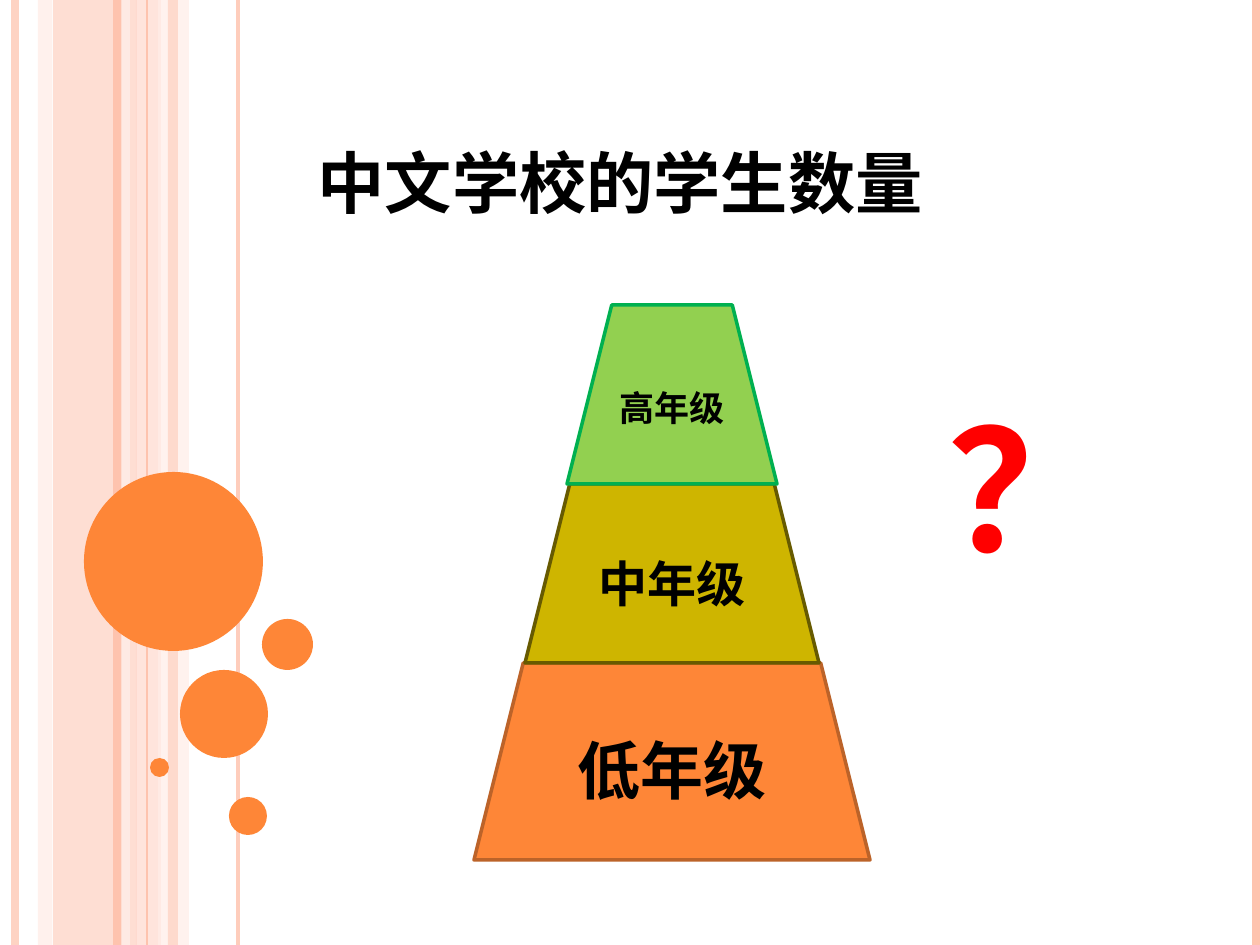
from dataclasses import dataclass

from lxml import etree
from pptx import Presentation
from pptx import util as u
from pptx.dml.color import RGBColor
from pptx.enum import shapes, text
from pptx.oxml.ns import qn

SCALE = 914400 / 126  # EMU in one px
SLIDE_W, SLIDE_H = 1260, 945


@dataclass(frozen=True)
class Theme:
    heading_font: str = "Noto Sans CJK SC"
    body_font: str = "Cambria"
    asian_font: str = "Noto Sans CJK SC"
    ink: str = "000000"
    alert: str = "FF0000"
    orange: str = "FE8637"
    orange_edge: str = "BC6329"
    olive: str = "CEB500"
    olive_edge: str = "675A00"
    green: str = "92D050"
    green_edge: str = "00B050"
    peach: str = "FEC3AE"
    blush: str = "FFD9CE"
    mist: str = "FFEDE8"
    title_size: int = 48
    question_size: int = 96
    low_size: int = 36
    middle_size: int = 28
    high_size: int = 20


THEME = Theme()


def px(value):
    return u.Emu(round(value * SCALE))


def box_px(*values):
    return [px(value) for value in values]


def set_alpha(color_format_parent, percent):
    """Make the solid fill below the given element partly transparent."""
    if percent < 100:
        color = color_format_parent.find(".//" + qn("a:srgbClr"))
        etree.SubElement(color, qn("a:alpha")).set("val", str(percent * 1000))


def write(frame, words, *, size, color=THEME.ink, font=THEME.body_font,
          align=text.PP_ALIGN.LEFT, anchor=text.MSO_ANCHOR.TOP,
          wrap=True, small_caps=False):
    frame.word_wrap = wrap
    frame.vertical_anchor = anchor
    paragraph = frame.paragraphs[0]
    paragraph.alignment = align
    run = paragraph.add_run()
    run.text = words
    run.font.size = u.Pt(size)
    run.font.bold = True
    run.font.name = font
    run.font.color.rgb = RGBColor.from_string(color)
    properties = run.font._element
    properties.set("lang", "zh-CN")
    properties.set("cap", "small" if small_caps else "none")
    asian = etree.Element(qn("a:ea"), typeface=THEME.asian_font)
    properties.find(qn("a:latin")).addnext(asian)


def add_filled(parts, preset, box, fill, edge=None, alpha=100):
    shape = parts.add_shape(preset, *box_px(*box))
    shape.shadow.inherit = False
    shape.fill.solid()
    shape.fill.fore_color.rgb = RGBColor.from_string(fill)
    set_alpha(shape._element.spPr, alpha)
    if edge:
        shape.line.color.rgb = RGBColor.from_string(edge)
        shape.line.width = u.Pt(2)
    else:
        shape.line.fill.background()
    return shape


def add_rule(parts, x, top, height, color, weight, alpha=100):
    rule = parts.add_connector(shapes.MSO_CONNECTOR.STRAIGHT,
                               *box_px(x, top, x, top + height))
    rule.line.color.rgb = RGBColor.from_string(color)
    rule.line.width = u.Pt(weight)
    set_alpha(rule._element.spPr, alpha)
    etree.SubElement(rule._element.spPr, qn("a:effectLst"))


def add_stripes(parts, left, top, height):
    """Full-height bands and rules."""
    def add_bands(bands):
        for x, width, color, alpha in bands:
            add_filled(parts, shapes.MSO_SHAPE.RECTANGLE,
                       (left + x, top, width, height), color, alpha=alpha)

    add_bands([(53, 84, THEME.peach, 54), (38, 14, THEME.blush, 36),
               (136, 25, THEME.blush, 70), (158, 31, THEME.mist, 71)])
    for x, color, weight, alpha in [
            (15, THEME.peach, 4.5, 73), (126, THEME.mist, 4.5, 83),
            (117, THEME.peach, 4.5, 100), (238, THEME.peach, 2.25, 82),
            (147, THEME.peach, 0.75, 100), (1256, THEME.peach, 4.5, 100)]:
        add_rule(parts, left + x, top, height, color, weight, alpha)
    add_bands([(168, 10, THEME.peach, 51)])


def add_bubbles(parts, left, top):
    """Cluster of circles: offset and diameter of each."""
    for x, y, diameter in [(0, 0, 179), (96, 198, 88), (66, 286, 19),
                           (145, 325, 38), (178, 147, 51)]:
        add_filled(parts, shapes.MSO_SHAPE.OVAL,
                   (left + x, top + y, diameter, diameter), THEME.orange)


def add_title(slide, left, top, width, height):
    title = slide.shapes.title
    title.left, title.top, title.width, title.height = box_px(
        left, top, width, height)
    write(title.text_frame, "中文学校的学生数量", size=THEME.title_size,
          font=THEME.heading_font, anchor=text.MSO_ANCHOR.BOTTOM,
          small_caps=True)


def add_pyramid(parts, left, top, width):
    """Grade tiers, centred and stacked from the top down."""
    pyramid = parts.add_group_shape()
    tiers = [
        ("高年级", 210, 179, THEME.green, THEME.green_edge, THEME.high_size),
        ("中年级", 294, 179, THEME.olive, THEME.olive_edge, THEME.middle_size),
        ("低年级", 396, 197, THEME.orange, THEME.orange_edge, THEME.low_size),
    ]
    bottom = top + sum(tier[2] for tier in tiers)
    # Lowest tier first, so that upper edges lie in front
    for grade, tier_w, tier_h, fill, edge, size in reversed(tiers):
        bottom -= tier_h
        tier = add_filled(pyramid.shapes, shapes.MSO_SHAPE.TRAPEZOID,
                          (left + (width - tier_w) / 2, bottom, tier_w, tier_h),
                          fill, edge)
        write(tier.text_frame, grade, size=size, align=text.PP_ALIGN.CENTER,
              anchor=text.MSO_ANCHOR.MIDDLE)


def add_question(parts, left, top, width, height):
    question = parts.add_textbox(*box_px(left, top, width, height))
    write(question.text_frame, "？", size=THEME.question_size,
          color=THEME.alert, wrap=False)
    question.text_frame.auto_size = text.MSO_AUTO_SIZE.SHAPE_TO_FIT_TEXT


def main():
    deck = Presentation()
    deck.slide_width, deck.slide_height = box_px(SLIDE_W, SLIDE_H)
    slide = deck.slides.add_slide(deck.slide_layouts[5])
    add_stripes(slide.shapes, 0, 0, SLIDE_H)
    add_bubbles(slide.shapes, 84, 472)
    add_title(slide, 305, 116, 798, 116)
    add_pyramid(slide.shapes, 474, 305, 396)
    add_question(slide.shapes, 935, 378, 195, 217)
    deck.save("out.pptx")


if __name__ == "__main__":
    main()
